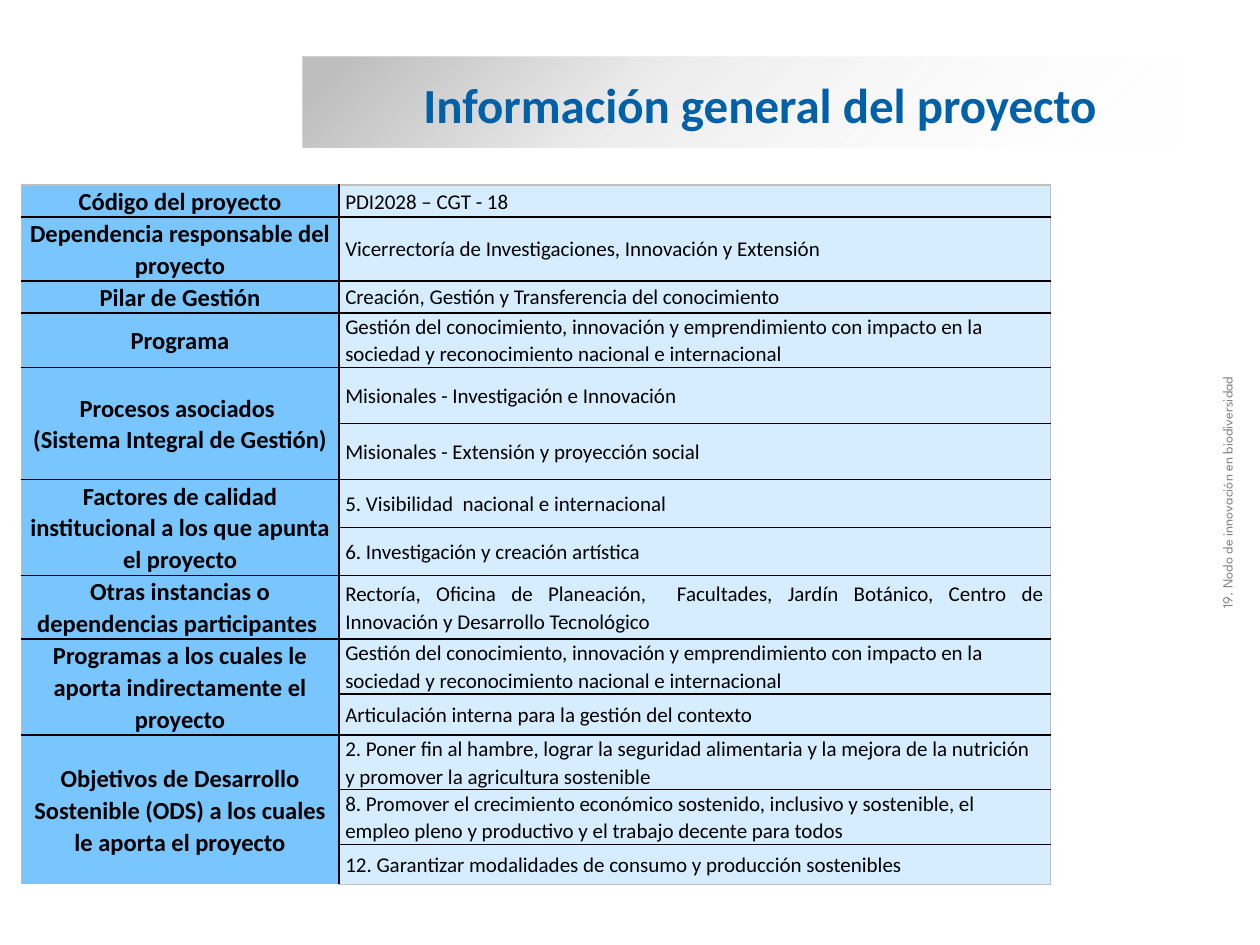
from lxml import etree
from pptx import Presentation
from pptx.dml.color import RGBColor
from pptx.enum.shapes import MSO_SHAPE
from pptx.enum.text import MSO_ANCHOR, PP_ALIGN
from pptx.oxml.ns import qn
from pptx.util import Cm, Pt

LEFT, CENTER, JUSTIFY = PP_ALIGN.LEFT, PP_ALIGN.CENTER, PP_ALIGN.JUSTIFY
MIDDLE = MSO_ANCHOR.MIDDLE
TITLE_ONLY = 5
BLACK, GREY = "000000", "BFBFBF"
LABEL_FILL, VALUE_FILL = "79C6FF", "D5EDFF"
PROGRAM = ("Gestión del conocimiento, innovación y emprendimiento con impacto en la "
           "sociedad y reconocimiento nacional e internacional")

# Each label with its values: (text, row height in cm)
SECTIONS = [
    ("Código del proyecto", [("PDI2028 – CGT - 18", 0.64)]),
    ("Dependencia responsable del proyecto",
     [("Vicerrectoría de Investigaciones, Innovación y Extensión", 1.26)]),
    ("Pilar de Gestión", [("Creación, Gestión y Transferencia del conocimiento", 0.64)]),
    ("Programa", [(PROGRAM, 1.08)]),
    ("Procesos asociados \n(Sistema Integral de Gestión)",
     [("Misionales - Investigación e Innovación", 1.13),
      ("Misionales - Extensión y proyección social", 1.13)]),
    ("Factores de calidad institucional a los que apunta el proyecto",
     [("5. Visibilidad  nacional e internacional", 0.97),
      ("6. Investigación y creación artística", 0.93)]),
    ("Otras instancias o dependencias participantes ",
     [("Rectoría, Oficina de Planeación,  Facultades, Jardín Botánico, Centro de "
       "Innovación y Desarrollo Tecnológico", 1.27)]),
    ("Programas a los cuales le aporta indirectamente el proyecto",
     [(PROGRAM, 1.09), ("Articulación interna para la gestión del contexto", 0.82)]),
    ("Objetivos de Desarrollo Sostenible (ODS) a los cuales le aporta el proyecto",
     [("2. Poner fin al hambre, lograr la seguridad alimentaria y la mejora de la "
       "nutrición y promover la agricultura sostenible", 1.09),
      ("8. Promover el crecimiento económico sostenido, inclusivo y sostenible, el "
       "empleo pleno y productivo y el trabajo decente para todos", 1.09),
      ("12. Garantizar modalidades de consumo y producción sostenibles", 0.81)]),
]


def write(paragraph, text, size, color, font="Calibri", bold=False, align=LEFT):
    paragraph.alignment = align
    for index, line in enumerate(text.split("\n")):
        if index:
            paragraph.add_line_break()
        run = paragraph.add_run()
        run.text = line
        run.font.name, run.font.size, run.font.bold = font, Pt(size), bold
        run.font.color.rgb = RGBColor.from_string(color)


def add_border(cell, side, color):
    line = etree.SubElement(cell._tc.get_or_add_tcPr(), qn("a:ln" + side), w=str(Pt(1)))
    fill = etree.SubElement(line, qn("a:solidFill"))
    etree.SubElement(fill, qn("a:srgbClr"), val=color)


presentation = Presentation()
presentation.slide_width, presentation.slide_height = Cm(25.4), Cm(19.05)
slide = presentation.slides.add_slide(presentation.slide_layouts[TITLE_ONLY])
shapes = slide.shapes

# Title band fading to transparent white
band = shapes.add_shape(MSO_SHAPE.RECTANGLE, Cm(6.1), Cm(1.14), Cm(17.73), Cm(1.83))
band.shadow.inherit = False
band.line.fill.background()
band.fill.gradient()
band.fill.gradient_angle = 315
stops = band._element.spPr.find(qn("a:gradFill")).find(qn("a:gsLst"))
for stop in list(stops):
    stops.remove(stop)
for position, color, alpha in [(5, GREY, 100), (37, GREY, 31), (100, "FFFFFF", 0)]:
    stop = etree.SubElement(stops, qn("a:gs"), pos=str(position * 1000))
    stop_color = etree.SubElement(stop, qn("a:srgbClr"), val=color)
    etree.SubElement(stop_color, qn("a:alpha"), val=str(alpha * 1000))

# Title, brought in front of the band
title = shapes.title
title.left, title.top, title.width, title.height = Cm(8.28), Cm(1.37), Cm(15.75), Cm(1.45)
title.text_frame.vertical_anchor = MIDDLE
write(title.text_frame.paragraphs[0], "Información general del proyecto", 28, "0060A8", bold=True)
band._element.addnext(title._element)

# Project table
heights = [height for _, values in SECTIONS for _, height in values]
table = shapes.add_table(len(heights), 2, Cm(0.43), Cm(3.73),
                         Cm(20.75), Cm(sum(heights))).table
table.first_row = table.horz_banding = False
table.columns[0].width, table.columns[1].width = Cm(6.4), Cm(14.35)
for row, height in zip(table.rows, heights):
    row.height = Cm(height)

first = 0
for label, values in SECTIONS:
    last = first + len(values) - 1
    for index, (value, _) in enumerate(values, first):
        for column, fill, inset in [(0, LABEL_FILL, 0.1), (1, VALUE_FILL, 0.13)]:
            cell = table.cell(index, column)
            cell.margin_left = cell.margin_right = Cm(inset)
            cell.margin_top = cell.margin_bottom = 0
            cell.vertical_anchor = MIDDLE
            add_border(cell, "L", BLACK if column else GREY)
            add_border(cell, "R", GREY if column else BLACK)
            if column or index == first:
                add_border(cell, "T", BLACK if index else GREY)
            if column or index == last:
                add_border(cell, "B", BLACK if index < len(heights) - 1 else GREY)
            cell.fill.solid()
            cell.fill.fore_color.rgb = RGBColor.from_string(fill)
        paragraph = cell.text_frame.paragraphs[0]
        paragraph.line_spacing = 1.07
        write(paragraph, value, 12, BLACK, align=JUSTIFY if value.startswith("Rectoría") else LEFT)
    label_cell = table.cell(first, 0)
    if last > first:
        label_cell.merge(table.cell(last, 0))
    paragraph = label_cell.text_frame.paragraphs[0]
    paragraph.line_spacing = 1.07
    write(paragraph, label, 14, BLACK, bold=True, align=CENTER)
    first = last + 1

# Project name running up the right edge
side_note = shapes.add_textbox(Cm(18.34), Cm(9.63), Cm(12.8), Cm(0.6))
side_note.rotation = 270
side_note.text_frame.word_wrap = True
write(side_note.text_frame.paragraphs[0], "19. Nodo de innovación en biodiversidad",
      8, "808080", font="League Spartan", align=CENTER)

presentation.save("out.pptx")
